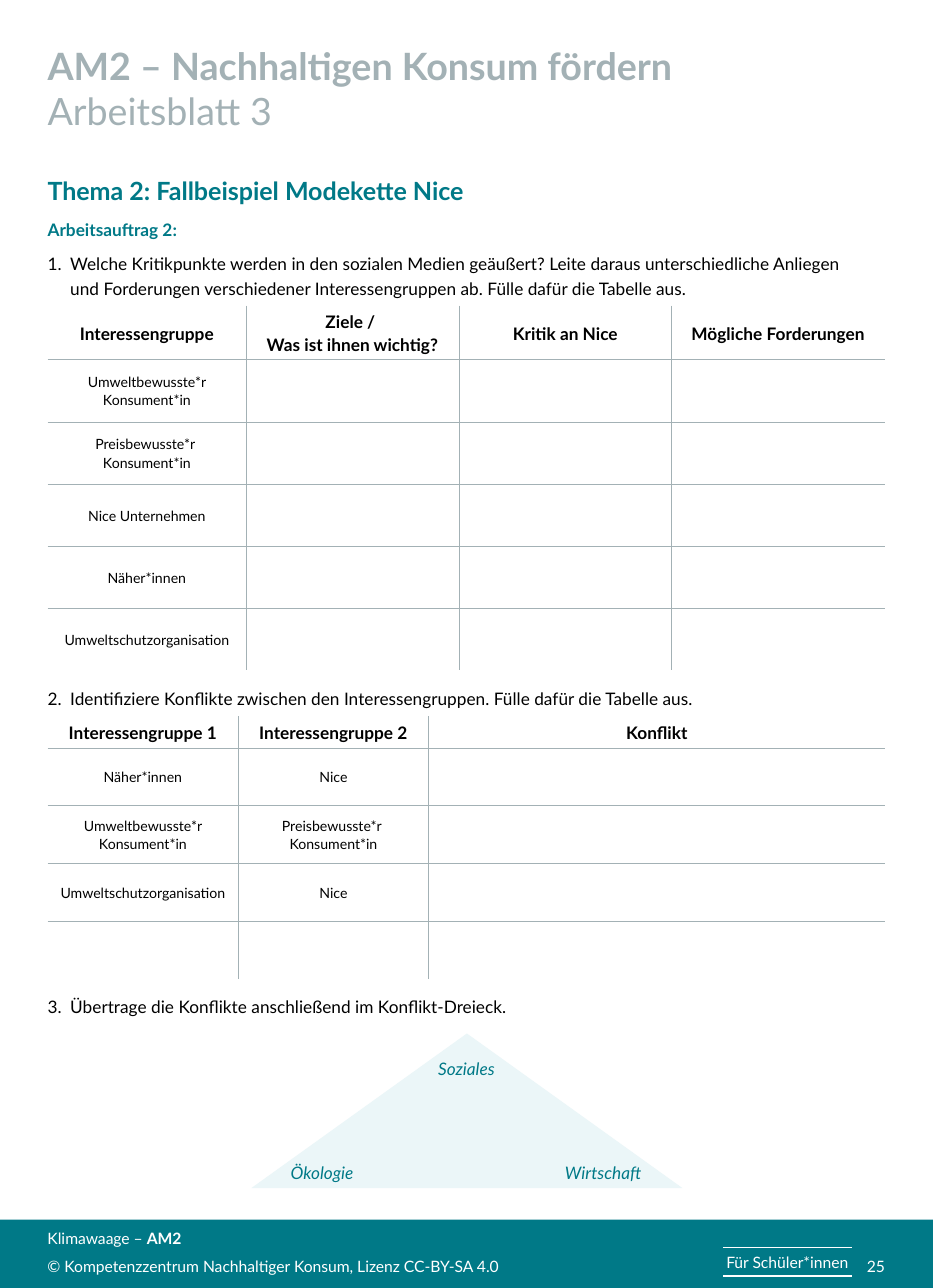
from copy import deepcopy

from lxml.etree import SubElement
from pptx import Presentation
from pptx.dml.color import RGBColor
from pptx.enum.shapes import MSO_CONNECTOR, MSO_SHAPE
from pptx.enum.text import MSO_ANCHOR, MSO_AUTO_SIZE, PP_ALIGN
from pptx.oxml import parse_xml
from pptx.oxml.ns import nsdecls, qn
from pptx.util import Cm, Pt

COLORS = {
    "teal": "007987",
    "mist": "EBF6F8",
    "grey": "A3B1B5",
    "black": "000000",
    "white": "FFFFFF",
}
FONT = "Lato"
PAGE_WIDTH, PAGE_HEIGHT = 21.0, 29.0
LEFT, WIDTH = 1.07, 18.85
FOOTER_TOP = 27.46


def rgb(name):
    return RGBColor.from_string(COLORS[name])


def write(paragraph, text, size=11, color="black", bold=False, italic=False,
          align=PP_ALIGN.LEFT, spacing=1.0, before=0, after=0, hang=0):
    properties = paragraph._p.get_or_add_pPr()
    if properties.find(qn("a:buNone")) is None:
        SubElement(properties, qn("a:buNone"))
    properties.set("marL", str(Cm(hang)))
    properties.set("indent", str(-Cm(hang)))
    paragraph.alignment = align
    paragraph.line_spacing = spacing
    paragraph.space_before = Pt(before)
    paragraph.space_after = Pt(after)
    for number, line in enumerate(text.split("\n")):
        if number:
            paragraph.add_line_break()
            paragraph._p[-1].append(deepcopy(run._r.rPr))
        if not line:
            continue
        run = paragraph.add_run()
        run.text = line
        run.font.name = FONT
        run.font.size = Pt(size)
        run.font.bold = bold
        run.font.italic = italic
        run.font.color.rgb = rgb(color)


class Worksheet:
    def __init__(self, presentation):
        self.slide = presentation.slides.add_slide(presentation.slide_layouts[1])
        self.shapes = self.slide.shapes

    def frame(self, shape, anchor=MSO_ANCHOR.TOP, insets=(0, 0, 0, 0)):
        frame = shape.text_frame
        frame.word_wrap = True
        frame.auto_size = MSO_AUTO_SIZE.NONE
        frame.vertical_anchor = anchor
        (frame.margin_left, frame.margin_top,
         frame.margin_right, frame.margin_bottom) = map(Cm, insets)
        return frame

    def placeholder(self, index, left, top, width, height, **layout):
        holder = self.slide.placeholders[index]
        holder.left, holder.top = Cm(left), Cm(top)
        holder.width, holder.height = Cm(width), Cm(height)
        return self.frame(holder, **layout)

    def textbox(self, left, top, width, height, **layout):
        box = self.shapes.add_textbox(Cm(left), Cm(top), Cm(width), Cm(height))
        return self.frame(box, **layout)

    def shape(self, kind, left, top, width, height, color):
        shape = self.shapes.add_shape(kind, Cm(left), Cm(top), Cm(width), Cm(height))
        shape.shadow.inherit = False
        shape.fill.solid()
        shape.fill.fore_color.rgb = rgb(color)
        shape.line.fill.background()

    def rule(self, left, right, y):
        line = self.shapes.add_connector(
            MSO_CONNECTOR.STRAIGHT, Cm(left), Cm(y), Cm(right), Cm(y))
        line.line.color.rgb = rgb("white")
        line.line.width = Pt(0.75)
        SubElement(line._element.spPr, qn("a:effectLst"))

    def borders(self, cell, sides):
        properties = cell._tc.get_or_add_tcPr()
        for position, (side, visible) in enumerate(sides.items()):
            paint = (f'<a:solidFill><a:srgbClr val="{COLORS["grey"]}"/></a:solidFill>'
                     if visible else "<a:noFill/>")
            properties.insert(position, parse_xml(
                f'<a:ln{side} {nsdecls("a")} w="{Pt(0.5)}">{paint}</a:ln{side}>'))

    def table(self, top, widths, heights, rows, insets):
        table = self.shapes.add_table(
            len(heights), len(widths), Cm(LEFT), Cm(top),
            Cm(sum(widths)), Cm(sum(heights))).table
        table.first_row = table.horz_banding = False
        for column, width in zip(table.columns, widths):
            column.width = Cm(width)
        for r, (height, texts) in enumerate(zip(heights, rows)):
            table.rows[r].height = Cm(height)
            for c in range(len(widths)):
                cell = table.cell(r, c)
                cell.fill.background()
                cell.vertical_anchor = MSO_ANCHOR.MIDDLE
                cell.margin_left = cell.margin_right = Cm(insets[0])
                cell.margin_top = cell.margin_bottom = Cm(insets[1])
                self.borders(cell, {"L": c > 0, "R": c < len(widths) - 1,
                                    "T": r > 0, "B": r < len(heights) - 1})
                if c < len(texts):
                    write(cell.text_frame.paragraphs[0], texts[c],
                          size=9 if r else 11, bold=r == 0,
                          align=PP_ALIGN.CENTER, spacing=1.07, after=8)


def add_header(sheet):
    title = sheet.placeholder(0, LEFT, 0.97, WIDTH, 2.46).paragraphs[0]
    write(title, "AM2 – Nachhaltigen Konsum fördern \n", size=24, color="grey", bold=True)
    write(title, "Arbeitsblatt 3", size=24, color="grey")


def add_tasks(sheet):
    tasks = sheet.placeholder(1, LEFT, 3.81, WIDTH, 23.01, insets=(0, 0, 0.25, 0.2))
    write(tasks.paragraphs[0], "Thema 2: Fallbeispiel Modekette Nice",
          size=16, color="teal", bold=True, spacing=1.2, after=6)
    write(tasks.add_paragraph(), "Arbeitsauftrag 2:",
          color="teal", bold=True, spacing=1.2, after=6)
    questions = [
        ("1.\tWelche Kritikpunkte werden in den sozialen Medien geäußert? Leite daraus "
         "unterschiedliche Anliegen und Forderungen verschiedener Interessengruppen ab. "
         "Fülle dafür die Tabelle aus.", 0),
        ("2.\tIdentifiziere Konflikte zwischen den Interessengruppen. "
         "Fülle dafür die Tabelle aus.", 240.2),
        ("3.\tÜbertrage die Konflikte anschließend im Konflikt-Dreieck.", 174.7),
    ]
    for question, gap in questions:
        write(tasks.add_paragraph(), question, spacing=1.2, before=gap, after=6, hang=0.51)


def add_tables(sheet):
    eco_consumer = "Umweltbewusste*r Konsument*in"
    price_consumer = "Preisbewusste*r \nKonsument*in"
    sheet.table(
        6.88, [4.47] + [4.79] * 3, [1.22] + [1.4] * 5,
        [["Interessengruppe", "Ziele / \nWas ist ihnen wichtig?",
          "Kritik an Nice", "Mögliche Forderungen"],
         [eco_consumer], [price_consumer], ["Nice Unternehmen"],
         ["Näher*innen"], ["Umweltschutzorganisation"]],
        insets=(0.2, 0.1))
    sheet.table(
        16.13, [4.29, 4.29, 10.27], [0.71] + [1.3] * 4,
        [["Interessengruppe 1", "Interessengruppe 2", "Konflikt"],
         ["Näher*innen", "Nice"], [eco_consumer, price_consumer],
         ["Umweltschutzorganisation", "Nice"], []],
        insets=(0.18, 0))


def add_triangle(sheet):
    sheet.shape(MSO_SHAPE.ISOSCELES_TRIANGLE, 5.66, 23.27, 9.7, 3.48, "mist")
    corners = [("Soziales", 9.09, 23.7), ("Ökologie", 5.84, 26.04),
               ("Wirtschaft", 12.17, 26.04)]
    for corner, left, top in corners:
        label = sheet.textbox(left, top, 2.82, 0.71, anchor=MSO_ANCHOR.MIDDLE)
        write(label.paragraphs[0], corner, color="teal", italic=True, align=PP_ALIGN.CENTER)


def add_footer(sheet):
    sheet.shape(MSO_SHAPE.RECTANGLE, 0, FOOTER_TOP, PAGE_WIDTH,
                PAGE_HEIGHT - FOOTER_TOP, "teal")
    small = {"size": 10, "color": "white"}
    credits = sheet.textbox(LEFT, FOOTER_TOP, 15.44, 1.27, anchor=MSO_ANCHOR.BOTTOM)
    write(credits.paragraphs[0], "Klimawaage – ", after=6, **small)
    write(credits.paragraphs[0], "AM2", bold=True, after=6, **small)
    write(credits.add_paragraph(),
          "© Kompetenzzentrum Nachhaltiger Konsum, Lizenz CC-BY-SA 4.0", after=6, **small)
    page = sheet.textbox(16.99, FOOTER_TOP, 2.93, 1.27, anchor=MSO_ANCHOR.BOTTOM)
    write(page.paragraphs[0], "25", align=PP_ALIGN.RIGHT, **small)
    audience = sheet.textbox(16.03, 28.09, 3.38, 0.64, anchor=MSO_ANCHOR.MIDDLE)
    write(audience.paragraphs[0], "Für Schüler*innen", align=PP_ALIGN.CENTER, **small)
    for y in (28.09, 28.73):
        sheet.rule(16.28, 19.18, y)


def main():
    presentation = Presentation()
    presentation.slide_width = Cm(PAGE_WIDTH)
    presentation.slide_height = Cm(PAGE_HEIGHT)
    sheet = Worksheet(presentation)
    add_header(sheet)
    add_tasks(sheet)
    add_tables(sheet)
    add_triangle(sheet)
    add_footer(sheet)
    presentation.save("out.pptx")


if __name__ == "__main__":
    main()
